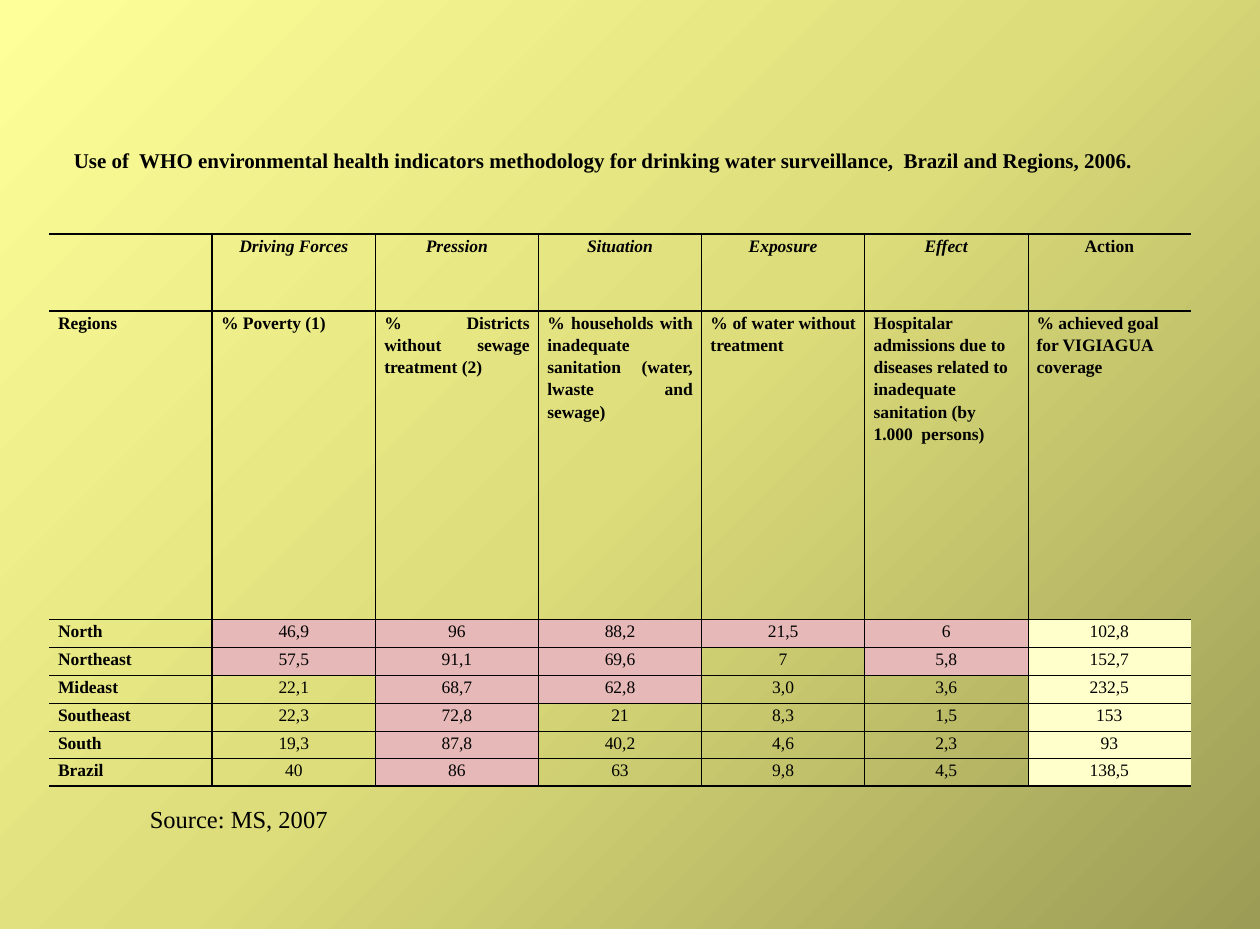
from copy import deepcopy
from dataclasses import dataclass

from lxml import etree
from pptx import Presentation
from pptx.dml.color import RGBColor
from pptx.enum.shapes import MSO_SHAPE
from pptx.enum.text import MSO_ANCHOR, MSO_AUTO_SIZE, PP_ALIGN
from pptx.oxml.ns import qn
from pptx.util import Cm, Pt

RECT = MSO_SHAPE.RECTANGLE
MIDDLE, TOP = MSO_ANCHOR.MIDDLE, MSO_ANCHOR.TOP
GROW = MSO_AUTO_SIZE.SHAPE_TO_FIT_TEXT
LEFT, CENTER, FULL = PP_ALIGN.LEFT, PP_ALIGN.CENTER, PP_ALIGN.JUSTIFY


@dataclass(frozen=True)
class Theme:
    font: str = "Times New Roman"
    ink: str = "000000"
    wash: tuple = ("9C9C56", "DDDD7B", "FFFF99")
    alert: str = "E6B9B8"
    goal: str = "FFFFCC"
    title: int = 12
    body: int = 10
    note: int = 14


# Table content
HEADS = ["", "Driving Forces", "Pression", "Situation", "Exposure", "Effect", "Action"]
LABELS = [
    "Regions",
    "% Poverty (1)",
    "% Districts without sewage treatment (2)",
    "% households with inadequate sanitation (water, lwaste  and sewage)",
    "% of water without treatment",
    "Hospitalar  admissions due to diseases related to inadequate sanitation "
    "(by 1.000  persons)",
    "% achieved goal for VIGIAGUA coverage",
]
REGIONS = [
    ["North", "46,9", "96", "88,2", "21,5", "6", "102,8"],
    ["Northeast", "57,5", "91,1", "69,6", "7", "5,8", "152,7"],
    ["Mideast", "22,1", "68,7", "62,8", "3,0", "3,6", "232,5"],
    ["Southeast", "22,3", "72,8", "21", "8,3", "1,5", "153"],
    ["South", "19,3", "87,8", "40,2", "4,6", "2,3", "93"],
    ["Brazil", "40", "86", "63", "9,8", "4,5", "138,5"],
]
# Columns in alert colour, one entry per region
ALERTS = [{1, 2, 3, 4, 5}, {1, 2, 3, 5}, {2, 3}, {2}, {2}, {2}]

# Line widths in points, from the first edge to the last
ROW_LINES = [1.5, 1] + [0.25] * 5 + [1, 1.5]
COL_LINES = [0, 1] + [0.25] * 5 + [0]


class Deck:
    def __init__(self, theme):
        self.theme = theme
        self.file = Presentation()
        self.file.slide_width, self.file.slide_height = Cm(25.4), Cm(19.05)
        self.slide = self.file.slides.add_slide(self.file.slide_layouts[6])

    def wash(self, *box):
        shape = self.slide.shapes.add_shape(RECT, *map(Cm, box))
        shape.shadow.inherit = False
        shape.line.fill.background()
        shape.fill.gradient()
        shape.fill.gradient_angle = 135
        stops = shape._element.spPr.find(".//" + qn("a:gsLst"))
        stops.append(deepcopy(stops[0]))
        for spot, stop, color in zip((0, 0.5, 1), shape.fill.gradient_stops, self.theme.wash):
            stop.position = spot
            stop.color.rgb = RGBColor.from_string(color)

    def run(self, par, text, size, bold=False, italic=False):
        run = par.add_run()
        run.text = text
        font = run.font
        font.name, font.size = self.theme.font, Pt(size)
        font.bold, font.italic = bold, italic
        font.color.rgb = RGBColor.from_string(self.theme.ink)

    def text(self, box, text, size, bold=False, align=LEFT, anchor=TOP, indent=0):
        frame = self.slide.shapes.add_textbox(*map(Cm, box)).text_frame
        frame.word_wrap = True
        frame.auto_size = GROW
        frame.vertical_anchor = anchor
        par = frame.paragraphs[0]
        par.alignment = align
        if indent:
            props = par._p.get_or_add_pPr()
            props.set("marL", "0")
            props.set("indent", str(Cm(indent)))
        self.run(par, text, size, bold)

    def edge(self, cell, side, width):
        line = etree.SubElement(cell._tc.get_or_add_tcPr(), qn("a:ln" + side))
        line.set("w", str(Pt(width)))
        if width:
            fill = etree.SubElement(line, qn("a:solidFill"))
            etree.SubElement(fill, qn("a:srgbClr")).set("val", self.theme.ink)
        else:
            etree.SubElement(line, qn("a:noFill"))

    def cell(self, cell, row, col, text):
        theme = self.theme
        cell.margin_left = cell.margin_right = Cm(0.18)
        cell.margin_top = cell.margin_bottom = 0

        # Borders come before the fill
        self.edge(cell, "L", COL_LINES[col])
        self.edge(cell, "R", COL_LINES[col + 1])
        self.edge(cell, "T", ROW_LINES[row])
        self.edge(cell, "B", ROW_LINES[row + 1])
        color = None
        if row > 1:
            color = theme.goal if col == 6 else theme.alert if col in ALERTS[row - 2] else None
        if color:
            cell.fill.solid()
            cell.fill.fore_color.rgb = RGBColor.from_string(color)
        else:
            cell.fill.background()

        if not text:
            return
        par = cell.text_frame.paragraphs[0]
        par.line_spacing = 1.15
        if row == 1 and col > 4:
            par.alignment = LEFT
        else:
            par.alignment = FULL if row == 1 or col == 0 else CENTER
            par.space_after = Pt(10)
        self.run(par, text, theme.body, bold=row < 2 or col == 0,
                 italic=row == 0 and col < 6)

    def table(self, left, top, width, heights, rows):
        count = len(rows[0])
        table = self.slide.shapes.add_table(
            len(rows), count, Cm(left), Cm(top), Cm(width), Cm(sum(heights))).table
        table.first_row = table.horz_banding = False
        for col in table.columns:
            col.width = Cm(width / count)
        for r, (height, row) in enumerate(zip(heights, rows)):
            table.rows[r].height = Cm(height)
            for c, text in enumerate(row):
                self.cell(table.cell(r, c), r, c, text)


def main():
    theme = Theme()
    deck = Deck(theme)
    # Background
    deck.wash(0, 0, 25.4, 18.72)
    # Indicators
    deck.table(0.99, 4.72, 23.02, [1.55, 6.22] + [0.56] * 6, [HEADS, LABELS] + REGIONS)
    # Title and source
    deck.text((0, 2.84, 25.4, 0.76),
              "Use of  WHO environmental health indicators methodology for drinking "
              "water surveillance,  Brazil and Regions, 2006.",
              theme.title, bold=True, align=FULL, anchor=MIDDLE, indent=1.24)
    deck.text((2.77, 16.08, 4.57, 1.63), "Source: MS, 2007", theme.note)
    deck.file.save("out.pptx")


if __name__ == "__main__":
    main()
